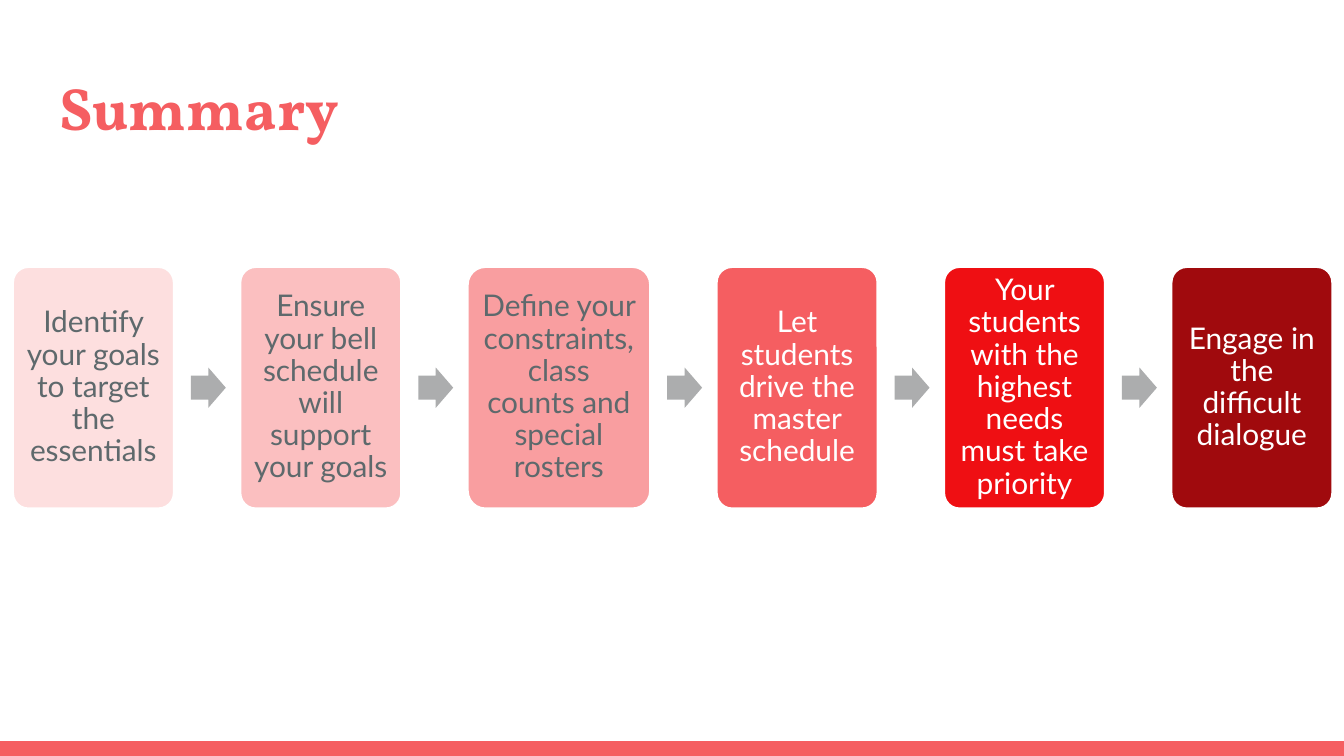
from pptx import Presentation
from pptx.dml.color import RGBColor
from pptx.enum.shapes import MSO_SHAPE as Shape
from pptx.enum.text import MSO_ANCHOR as Anchor, PP_ALIGN as Align
from pptx.util import Inches, Pt

WIDTH = 10
HEIGHT = WIDTH * 9 / 16
COLORS = {
    "coral": "F55E61", "white": "FFFFFF", "slate": "5E696C", "arrow": "ACADAE",
    "blush": "FDDFDF", "pink": "FBBFC0", "rose": "F99EA0", "red": "EF0F13",
    "maroon": "A00A0D",
}
STEPS = [
    ("Identify your goals to target the essentials", "blush", "slate", 1.21),
    ("Ensure your bell schedule will support your goals", "pink", "slate", 1.21),
    ("Define your constraints, class counts and special rosters", "rose", "slate", 1.37),
    ("Let students drive the master schedule", "coral", "white", 1.21),
    ("Your students with the highest needs must take priority", "red", "white", 1.21),
    ("Engage in the difficult dialogue", "maroon", "white", 1.21),
]
FLOW_LEFT, FLOW_WIDTH = 0.09, 9.83
STEP_TOP, STEP_HEIGHT = 1.98, 1.81
ARROW_WIDTH, ARROW_HEIGHT = 0.26, 0.3


def rgb(name):
    """Return the named colour."""
    return RGBColor.from_string(COLORS[name])


def set_text(frame, text, font, size, color, inset, anchor):
    """Fill a text frame with one formatted paragraph and return it."""
    frame.text = text
    frame.word_wrap = True
    frame.vertical_anchor = anchor
    frame.margin_left = frame.margin_right = Inches(inset)
    frame.margin_top = frame.margin_bottom = Inches(inset)
    paragraph = frame.paragraphs[0]
    for run in paragraph.runs:
        run.font.name = font
        run.font.size = Pt(size)
        run.font.color.rgb = rgb(color)
    return paragraph


def add_block(slide, kind, box, fill):
    """Add a flat, borderless preset shape."""
    block = slide.shapes.add_shape(kind, *map(Inches, box))
    block.shadow.inherit = False
    block.fill.solid()
    block.fill.fore_color.rgb = rgb(fill)
    block.line.fill.background()
    return block


def add_title(slide, text):
    """Place and format the slide title."""
    title = slide.shapes.title
    title.left, title.top, title.width, title.height = map(Inches, (0.34, 0.43, 9.32, 0.68))
    paragraph = set_text(title.text_frame, text, "Vollkorn", 32, "coral", 0.1, Anchor.TOP)
    paragraph.alignment = Align.LEFT
    paragraph.line_spacing = 1.0
    paragraph.space_before = Pt(0)
    paragraph.runs[0].font.bold = True


def add_step(slide, left, width, text, fill, color):
    """Add one rounded step card with its text."""
    card = add_block(slide, Shape.ROUNDED_RECTANGLE, (left, STEP_TOP, width, STEP_HEIGHT), fill)
    card.adjustments[0] = 0.1
    card.line.color.rgb = rgb("white")
    card.line.width = Pt(2)
    paragraph = set_text(card.text_frame, text, "Lato", 16, color, 0.07, Anchor.MIDDLE)
    paragraph.alignment = Align.CENTER
    paragraph.line_spacing = 0.9


def add_arrow(slide, left):
    """Add an arrow centred on the height of the steps."""
    top = STEP_TOP + (STEP_HEIGHT - ARROW_HEIGHT) / 2
    arrow = add_block(slide, Shape.RIGHT_ARROW, (left, top, ARROW_WIDTH, ARROW_HEIGHT), "arrow")
    arrow.adjustments[0] = 0.6
    arrow.adjustments[1] = 0.5


def add_flow(slide):
    """Lay out the steps at equal gaps with an arrow in each gap."""
    gap = (FLOW_WIDTH - sum(step[-1] for step in STEPS)) / (len(STEPS) - 1)
    left = FLOW_LEFT
    for number, (text, fill, color, width) in enumerate(STEPS):
        if number:
            add_arrow(slide, left - gap * 3 / 4)
        add_step(slide, left, width, text, fill, color)
        left += width + gap


def main():
    """Build and save the summary slide."""
    deck = Presentation()
    deck.slide_width, deck.slide_height = Inches(WIDTH), Inches(HEIGHT)
    slide = deck.slides.add_slide(deck.slide_layouts[5])
    add_block(slide, Shape.RECTANGLE, (0, HEIGHT - 0.11, WIDTH, 0.11), "coral")
    add_title(slide, "Summary")
    add_flow(slide)
    deck.save("out.pptx")


if __name__ == "__main__":
    main()
